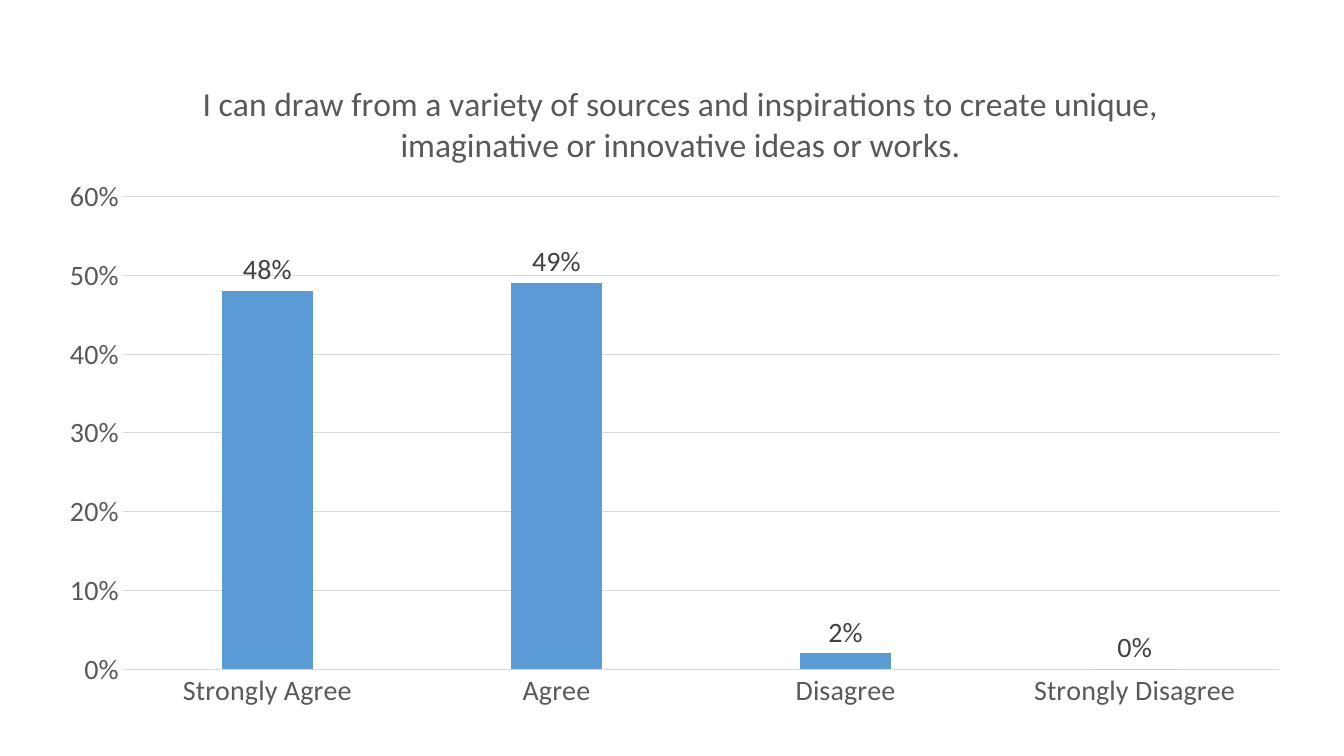
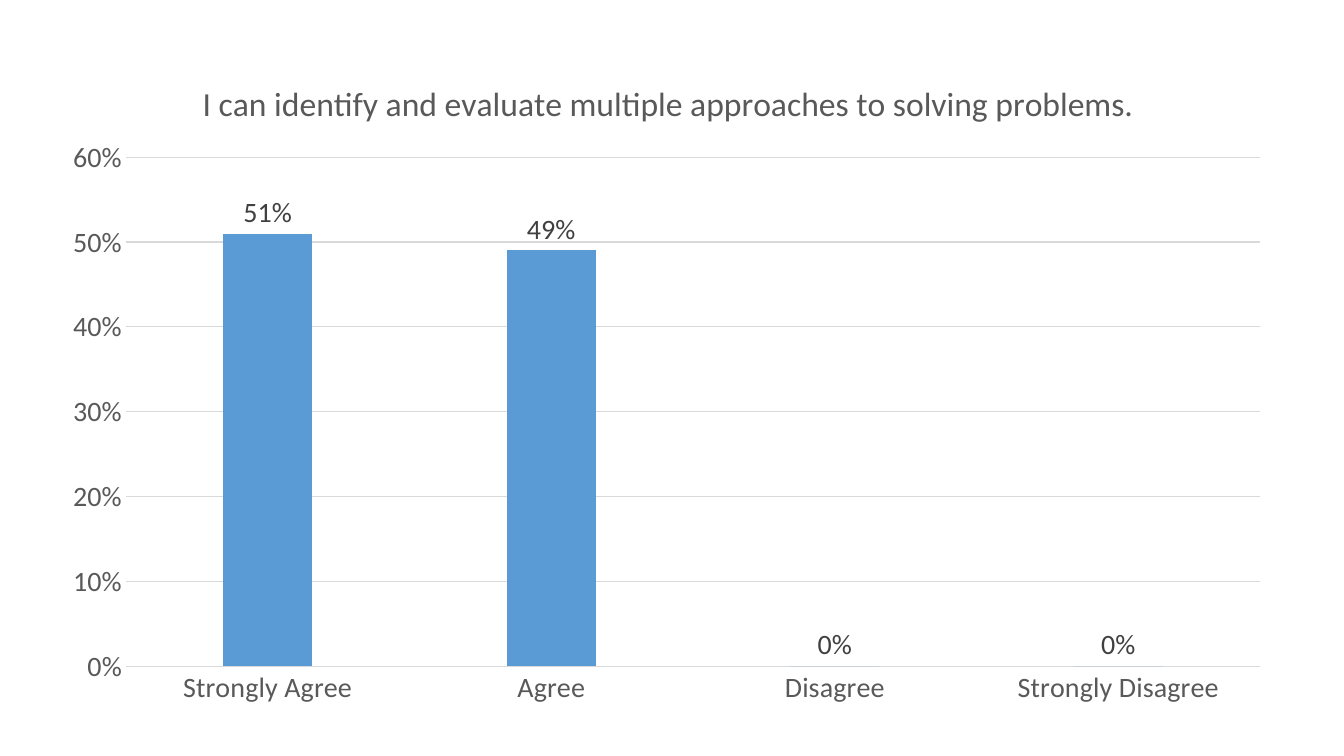
from lxml.etree import SubElement
from pptx import Presentation
from pptx.chart.data import CategoryChartData as ChartData
from pptx.dml.color import RGBColor
from pptx.enum.chart import XL_CHART_TYPE as Kind
from pptx.enum.chart import XL_LABEL_POSITION as Spot
from pptx.enum.chart import XL_TICK_MARK as Tick
from pptx.oxml.ns import qn
from pptx.util import Inches, Pt

COLORS = {"bar": "5B9BD5", "text": "595959", "label": "404040", "grid": "D9D9D9"}
FACE = "Calibri"
ANSWERS = ["Strongly Agree", "Agree", "Disagree", "Strongly Disagree"]


def color(name):
    return RGBColor.from_string(COLORS[name])


def style(font, size=20, tone="text", bold=False):
    font.name, font.size, font.bold = FACE, Pt(size), bold
    font.color.rgb = color(tone)


def write(frame, text, **form):
    """Put one formatted run of text in a text frame."""
    run = frame.paragraphs[0].add_run()
    run.text = text
    style(run.font, **form)


def rule(line):
    line.color.rgb = color("grid")
    line.width = Pt(0.75)


def place(node, index, box, area):
    """Pin a chart part to area (slide inches: left, top[, width, height])."""
    for old in node.findall(qn("c:layout")):
        node.remove(old)
    left, top, wide, high = box
    parts = {"x": (area[0] - left) / wide, "y": (area[1] - top) / high}
    if len(area) == 4:
        parts.update(w=area[2] / wide, h=area[3] / high)
    layout = SubElement(node, qn("c:layout"))
    node.insert(index, layout)
    manual = SubElement(layout, qn("c:manualLayout"))
    if len(area) == 4:
        SubElement(manual, qn("c:layoutTarget")).set("val", "inner")
    for key in "xy":
        SubElement(manual, qn(f"c:{key}Mode")).set("val", "edge")
    for key, part in parts.items():
        SubElement(manual, qn(f"c:{key}")).set("val", f"{part:.4f}")


class Deck:
    def __init__(self):
        self.file = Presentation()
        self.file.slide_width = Inches(13.33)
        self.file.slide_height = Inches(7.5)
        self.slide = None

    def page(self):
        self.slide = self.file.slides.add_slide(self.file.slide_layouts[6])

    def chart(self, box, plot, title, values):
        data = ChartData(number_format="0%")
        data.categories = ANSWERS
        data.add_series("Series 1", values)
        frame = self.slide.shapes.add_chart(
            Kind.COLUMN_CLUSTERED, *map(Inches, box), data)
        chart = frame.chart
        style(chart.font)
        chart.has_legend = False
        self.title(chart, box, title)
        self.axes(chart)
        self.bars(chart.plots[0])
        area = chart.element.find(".//" + qn("c:plotArea"))
        place(area, 0, box, plot)

    def title(self, chart, box, text):
        chart.has_title = True
        head = chart.chart_title
        head.include_in_layout = False
        write(head.text_frame, text, size=24)
        place(head.element, 1, box, (1.95, 0.74))

    def axes(self, chart):
        for axis in (chart.category_axis, chart.value_axis):
            axis.major_tick_mark = axis.minor_tick_mark = Tick.NONE
            style(axis.tick_labels.font)
        chart.category_axis.has_major_gridlines = False
        rule(chart.category_axis.format.line)
        scale = chart.value_axis
        scale.minimum_scale, scale.maximum_scale = 0, 0.6
        scale.major_unit = 0.1
        scale.format.line.fill.background()
        scale.tick_labels.number_format = "0%"
        scale.tick_labels.number_format_is_linked = False
        rule(scale.major_gridlines.format.line)

    def bars(self, plot):
        plot.gap_width, plot.overlap = 219, -27
        plot.vary_by_categories = False
        fill = plot.series[0].format.fill
        fill.solid()
        fill.fore_color.rgb = color("bar")
        plot.has_data_labels = True
        labels = plot.data_labels
        labels.show_value = True
        labels.position = Spot.OUTSIDE_END
        labels.number_format = "0%"
        labels.number_format_is_linked = False
        style(labels.font, tone="label")


def main():
    deck = Deck()
    deck.page()
    deck.chart(
        (0.45, 0.45, 12.49, 6.71), (1.22, 1.95, 11.47, 4.69),
        "I can draw from a variety of sources and inspirations to create "
        "unique, imaginative or innovative ideas or works.",
        (0.48, 0.49, 0.02, 0))
    deck.page()
    deck.chart(
        (0.47, 0.46, 12.28, 6.67), (1.25, 1.56, 11.25, 5.05),
        "I can identify and evaluate multiple approaches to solving problems.",
        (0.51, 0.49, 0, 0))
    deck.file.save("out.pptx")


if __name__ == "__main__":
    main()
